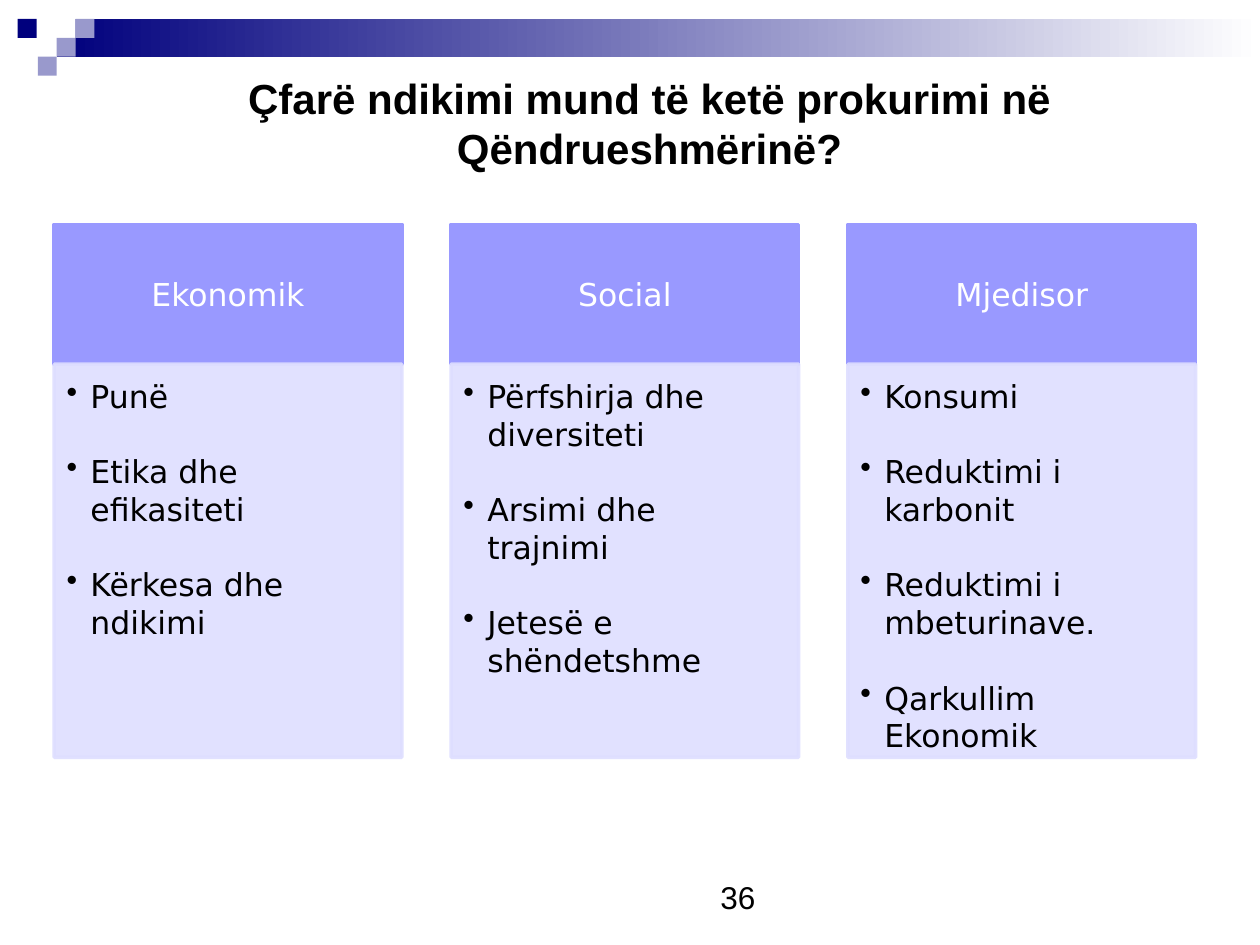
from pptx import Presentation, util as u
from pptx.dml.color import RGBColor
from pptx.enum import shapes, text
from pptx.oxml import xmlchemy
from lxml import etree

COLORS = {"navy": "00007D", "lavender": "9999CC", "white": "FFFFFF",
          "black": "000000", "header": "9999FF", "panel": "DEDEFF"}
TITLE = "Çfarë ndikimi mund të ketë prokurimi në Qëndrueshmërinë?"
PAGE_NUMBER = "36"
COLUMNS = [
    ("Ekonomik", ["Punë", "Etika dhe efikasiteti", "Kërkesa dhe ndikimi"]),
    ("Social", ["Përfshirja dhe diversiteti", "Arsimi dhe trajnimi",
                "Jetesë e shëndetshme"]),
    ("Mjedisor", ["Konsumi", "Reduktimi i karbonit", "Reduktimi i mbeturinave.",
                  "Qarkullim Ekonomik"]),
]
# Corner squares: left, top, colour
SQUARE = 0.15
SQUARES = [(0.45, 0.15, "white"), (0.6, 0.15, "lavender"), (0.3, 0.3, "white"),
           (0.14, 0.15, "navy"), (0.45, 0.3, "lavender"), (0.3, 0.45, "lavender")]
# Column grid
LEFT, TOP, WIDTH, STEP = 0.43, 1.78, 2.76, 3.15
HEADER_HEIGHT, PANEL_HEIGHT = 1.11, 3.12
DRAWING = "http://schemas.openxmlformats.org/drawingml/2006/main"


def rgb(name):
    return RGBColor.from_string(COLORS[name])


def add_box(slide, left, top, width, height, color, outlined=False):
    shape = slide.shapes.add_shape(shapes.MSO_SHAPE.RECTANGLE, u.Inches(left),
                                   u.Inches(top), u.Inches(width), u.Inches(height))
    shape.shadow.inherit = False
    shape.fill.solid()
    shape.fill.fore_color.rgb = rgb(color)
    if outlined:
        shape.line.color.rgb = rgb(color)
        shape.line.width = u.Pt(2)
    else:
        shape.line.fill.background()
    return shape


def set_frame(frame, margins, anchor):
    frame.word_wrap = True
    frame.vertical_anchor = anchor
    (frame.margin_left, frame.margin_top,
     frame.margin_right, frame.margin_bottom) = map(u.Inches, margins)


def write(paragraph, content, size, font, color, alignment, bold=False):
    paragraph.alignment = alignment
    run = paragraph.add_run()
    run.text = content
    run.font.size = u.Pt(size)
    run.font.name = font
    run.font.bold = bold
    run.font.color.rgb = rgb(color)


def add_bullet(paragraph):
    properties = paragraph._p.get_or_add_pPr()
    properties.set("marL", str(u.Inches(0.19)))
    properties.set("indent", str(u.Inches(-0.19)))
    etree.SubElement(properties, f"{{{DRAWING}}}buChar", char="•")


def make_translucent(color_format_parent, percent):
    for color in color_format_parent.iter(f"{{{DRAWING}}}srgbClr"):
        etree.SubElement(color, f"{{{DRAWING}}}alpha", val=str(percent * 1000))


def add_column(slide, left, heading, items):
    header = add_box(slide, left, TOP, WIDTH, HEADER_HEIGHT, "header", True)
    set_frame(header.text_frame, (0.14, 0.08, 0.14, 0.08), text.MSO_ANCHOR.MIDDLE)
    write(header.text_frame.paragraphs[0], heading, 18, "DejaVu Sans", "white",
          text.PP_ALIGN.CENTER)

    panel = add_box(slide, left, TOP + HEADER_HEIGHT, WIDTH, PANEL_HEIGHT, "panel", True)
    make_translucent(panel._element.spPr, 90)
    frame = panel.text_frame
    set_frame(frame, (0.1, 0.1, 0.14, 0.16), text.MSO_ANCHOR.TOP)
    for index, item in enumerate(items):
        paragraph = frame.add_paragraph() if index else frame.paragraphs[0]
        add_bullet(paragraph)
        if index:
            paragraph.space_before = u.Pt(21.5)
        write(paragraph, item, 18, "DejaVu Sans", "black", text.PP_ALIGN.LEFT)


def main():
    presentation = Presentation()
    presentation.slide_width, presentation.slide_height = u.Inches(10), u.Inches(7.5)
    slide = presentation.slides.add_slide(presentation.slide_layouts[5])

    # Gradient band and corner squares
    band = add_box(slide, 0.45, 0.15, 9.55, 0.3, "navy")
    band.fill.gradient()
    band.fill.gradient_angle = 0
    for stop, position, color in zip(band.fill.gradient_stops, (0, 1), ("navy", "white")):
        stop.position = position
        stop.color.rgb = rgb(color)
    for left, top, color in SQUARES:
        add_box(slide, left, top, SQUARE, SQUARE, color)

    # Page number
    number = slide.shapes.add_textbox(u.Inches(5.62), u.Inches(6.92),
                                      u.Inches(0.64), u.Inches(0.4))
    number.text_frame.word_wrap = False
    write(number.text_frame.paragraphs[0], PAGE_NUMBER, 18, "Arial", "black",
          text.PP_ALIGN.LEFT)

    # Title
    title = slide.shapes.title
    title.left, title.top = u.Inches(0.51), u.Inches(0.52)
    title.width, title.height = u.Inches(9.29), u.Inches(0.91)
    set_frame(title.text_frame, (0.1, 0.05, 0.1, 0.05), text.MSO_ANCHOR.MIDDLE)
    write(title.text_frame.paragraphs[0], TITLE, 24, "Arial", "black",
          text.PP_ALIGN.CENTER, bold=True)

    # Three columns
    for index, (heading, items) in enumerate(COLUMNS):
        add_column(slide, LEFT + index * STEP, heading, items)

    presentation.save("out.pptx")


if __name__ == "__main__":
    main()
